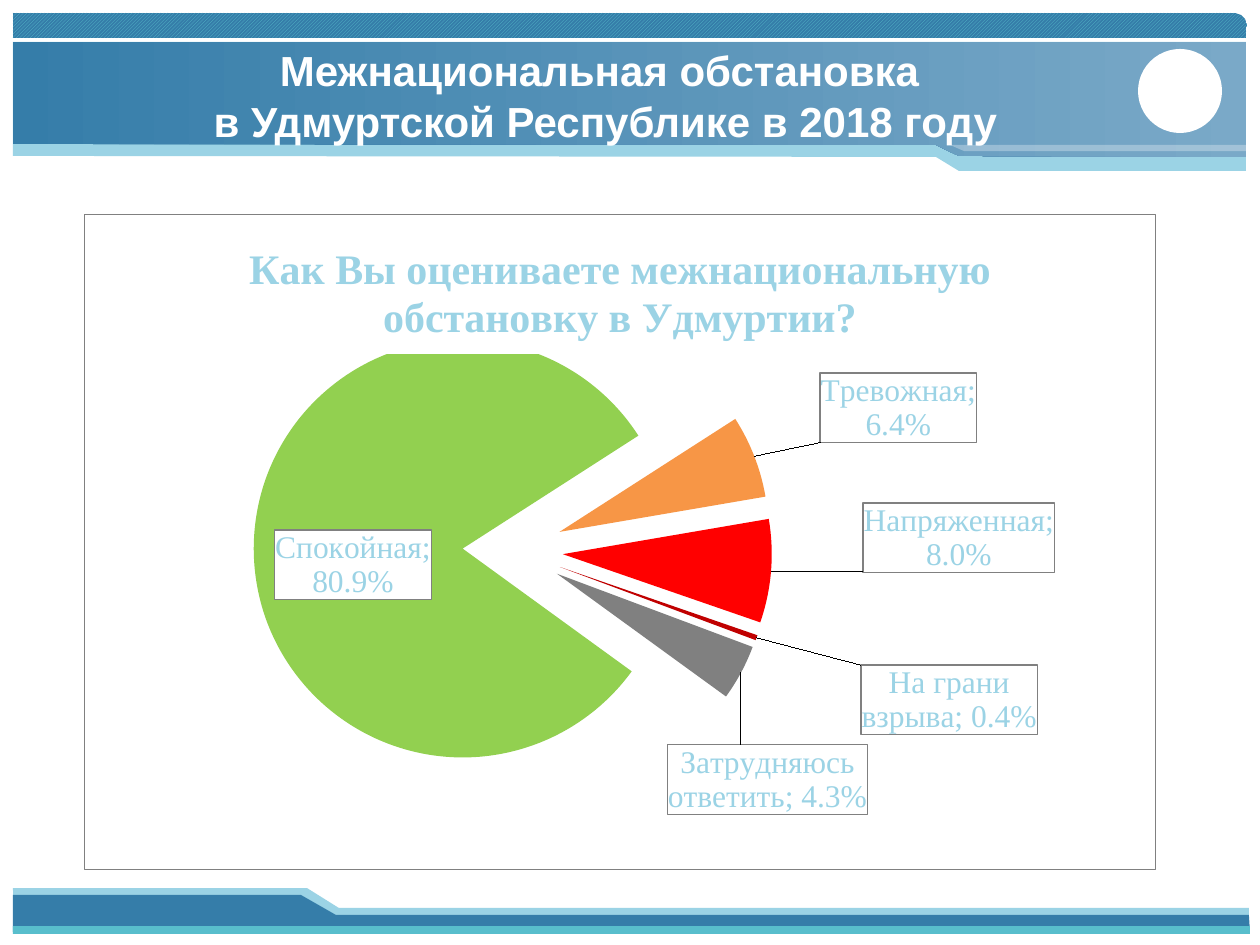
from dataclasses import dataclass

from lxml import etree
from pptx import Presentation
from pptx.chart.data import CategoryChartData
from pptx.dml.color import RGBColor
from pptx.enum.chart import XL_CHART_TYPE, XL_LABEL_POSITION
from pptx.enum.dml import MSO_PATTERN
from pptx.enum.shapes import MSO_SHAPE
from pptx.enum.text import MSO_ANCHOR, PP_ALIGN
from pptx.oxml import parse_xml
from pptx.oxml.ns import nsdecls, qn
from pptx.util import Pt

PIE = XL_CHART_TYPE.PIE
OUTSIDE, INSIDE = XL_LABEL_POSITION.OUTSIDE_END, XL_LABEL_POSITION.CENTER
HATCH = MSO_PATTERN.DARK_UPWARD_DIAGONAL
RECTANGLE, ELLIPSE = MSO_SHAPE.RECTANGLE, MSO_SHAPE.OVAL
CENTER, MIDDLE = PP_ALIGN.CENTER, MSO_ANCHOR.MIDDLE
EMU_PER_PX = 914400 / 126
CHART_BOX = (84, 214, 1072, 656)


@dataclass(frozen=True)
class Theme:
    light: str = "9BD3E5"
    blue: str = "357DA9"
    pale_blue: str = "7AA9C8"
    teal: str = "58BECC"
    white: str = "FFFFFF"
    gray: str = "808080"
    black: str = "000000"
    heading_font: str = "Arial"
    chart_font: str = "Times New Roman"
    heading_size: int = 24
    label_size: int = 18
    chart_size: int = 10


THEME = Theme()

# category, share, colour, label position, label shift from that position in px
ANSWERS = [
    ("Спокойная", 0.809, "92D050", INSIDE, (-5, 19)),
    ("Тревожная", 0.064, "F79646", OUTSIDE, (59, -11)),
    ("Напряженная", 0.08, "FF0000", OUTSIDE, (85, -34)),
    ("На грани взрыва", 0.004, "C00000", OUTSIDE, (98, 25)),
    ("Затрудняюсь ответить", 0.043, "808080", OUTSIDE, (-80, 69)),
]


def px(*lengths):
    return [round(length * EMU_PER_PX) for length in lengths]


def rgb(value):
    return RGBColor.from_string(value)


def set_font(font, color, **values):
    for name, value in values.items():
        setattr(font, name, value)
    font.color.rgb = rgb(color)


def paint(shape, color):
    shape.shadow.inherit = False
    shape.line.fill.background()
    shape.fill.solid()
    shape.fill.fore_color.rgb = rgb(color)
    return shape


def add_band(page, points, color):
    builder = page.shapes.build_freeform(*points[0], scale=EMU_PER_PX)
    builder.add_line_segments(points[1:], close=True)
    return paint(builder.convert_to_shape(), color)


def add_preset(page, kind, box, color):
    return paint(page.shapes.add_shape(kind, *px(*box)), color)


def add_footer(page):
    add_band(page, [(14, 931), (1249, 931), (1249, 908), (339, 908),
                    (307, 888), (13, 888)], THEME.light)
    add_band(page, [(13, 932), (1250, 931), (1249, 915), (336, 915),
                    (301, 895), (13, 895)], THEME.blue)
    add_preset(page, RECTANGLE, (13, 926, 1237, 8), THEME.teal)


def add_header(page):
    strip = add_band(page, [(13, 13), (1235, 13), (1241, 15), (1245, 19),
                            (1247, 24), (1246, 38), (13, 38)], THEME.blue)
    strip.fill.patterned()
    strip.fill.pattern = HATCH
    strip.fill.fore_color.rgb = rgb(THEME.teal)
    strip.fill.back_color.rgb = rgb(THEME.blue)

    add_band(page, [(1246, 42), (13, 42), (13, 156), (936, 157),
                    (959, 171), (1246, 171)], THEME.light)
    banner = add_band(page, [(1246, 42), (13, 42), (13, 144), (936, 145),
                             (959, 156), (1246, 157)], THEME.blue)
    banner.fill.gradient()
    banner.fill.gradient_angle = 0
    for stop, color in zip(banner.fill.gradient_stops,
                           (THEME.blue, THEME.pale_blue)):
        stop.color.rgb = rgb(color)

    gloss = add_band(page, [(950, 145), (1247, 145), (1247, 151), (964, 151)],
                     THEME.white)
    color = gloss._element.spPr.find(qn("a:solidFill"))[0]
    etree.SubElement(color, qn("a:alpha"), val="30000")
    add_preset(page, ELLIPSE, (1138, 49, 84, 84), THEME.white)


def add_heading(page, text):
    box = page.shapes.add_textbox(*px(45, 35, 1121, 120))
    frame = box.text_frame
    frame.word_wrap = True
    frame.vertical_anchor = MIDDLE
    para = frame.paragraphs[0]
    para.text = text
    para.alignment = CENTER
    set_font(para.font, THEME.white, name=THEME.heading_font,
             size=Pt(THEME.heading_size), bold=True)


def layout_xml(**values):
    """Manual chart layout; values are the c:manualLayout children in order."""
    children = "".join(f'<c:{name} val="{value}"/>' for name, value in values.items())
    return parse_xml(f'<c:layout {nsdecls("c")}><c:manualLayout>{children}'
                     '</c:manualLayout></c:layout>')


def frame_xml(line, fill=None, width=9525):
    body = f'<a:solidFill><a:srgbClr val="{fill}"/></a:solidFill>' if fill else ""
    return parse_xml(f'<c:spPr {nsdecls("c", "a")}>{body}<a:ln w="{width}"><a:solidFill>'
                     f'<a:srgbClr val="{line}"/></a:solidFill></a:ln></c:spPr>')


def add_label(point, position, shift):
    label = point.data_label
    set_font(label.font, THEME.light, name=THEME.chart_font,
             size=Pt(THEME.label_size))
    label.position = position
    node = label._dLbl
    x, y = (round(move / side, 3) for move, side in zip(shift, CHART_BOX[2:]))
    node.find(qn("c:idx")).addnext(layout_xml(x=x, y=y))
    node.find(qn("c:txPr")).addprevious(frame_xml(THEME.gray, THEME.white))
    for name, shown in (("showVal", 1), ("showCatName", 1), ("showPercent", 0),
                        ("showLegendKey", 0), ("showSerName", 0)):
        node.find(qn(f"c:{name}")).set("val", str(shown))
    separator = etree.SubElement(node, qn("c:separator"))
    separator.text = "; "


def add_chart_title(chart, text):
    frame = chart.chart_title.text_frame
    frame.text = text
    set_font(frame.paragraphs[0].runs[0].font, THEME.light, bold=True,
             name=THEME.chart_font, size=Pt(THEME.heading_size))
    chart.chart_title.include_in_layout = False
    chart.chart_title.format.fill.solid()
    chart.chart_title.format.fill.fore_color.rgb = rgb(THEME.white)


def add_pie(page, title):
    data = CategoryChartData(number_format="0.0%")
    data.categories = [answer[0] for answer in ANSWERS]
    data.add_series("Series 1", [answer[1] for answer in ANSWERS])
    chart = page.shapes.add_chart(PIE, *px(*CHART_BOX), data).chart
    chart.has_legend = False
    set_font(chart.font, THEME.light, name=THEME.chart_font,
             size=Pt(THEME.chart_size))
    add_chart_title(chart, title)

    plot = chart.plots[0]
    plot.vary_by_categories = True
    series = plot.series[0]
    labels = series.data_labels
    labels.show_value = labels.show_category_name = True
    labels.number_format, labels.number_format_is_linked = "0.0%", False
    for index, (_, _, color, position, shift) in enumerate(ANSWERS):
        point = series.points[index]
        point.format.fill.solid()
        point.format.fill.fore_color.rgb = rgb(color)
        add_label(point, position, shift)

    leaders = labels._element.find(qn("c:showLeaderLines"))
    if leaders is None:
        leaders = etree.SubElement(labels._element, qn("c:showLeaderLines"))
    leaders.set("val", "1")
    lines = etree.SubElement(labels._element, qn("c:leaderLines"))
    lines.append(frame_xml(THEME.black, width=0))

    series._element.find(qn("c:dPt")).addprevious(
        parse_xml(f'<c:explosion {nsdecls("c")} val="24"/>'))
    for slice_node in series._element.findall(qn("c:dPt")):
        slice_node.find(qn("c:spPr")).addprevious(
            parse_xml(f'<c:explosion {nsdecls("c")} val="24"/>'))
    pie = plot._element
    angle = pie.find(qn("c:firstSliceAng"))
    if angle is None:
        angle = etree.SubElement(pie, qn("c:firstSliceAng"))
    angle.set("val", "126")

    area = pie.getparent()
    for old in area.findall(qn("c:layout")):
        area.remove(old)
    area.insert(0, layout_xml(layoutTarget="inner", xMode="edge", yMode="edge",
                              x=0.068, y=0.117, w=0.664, h=0.791))
    chart._chartSpace.find(qn("c:txPr")).addprevious(frame_xml(THEME.gray))


def main():
    deck = Presentation()
    deck.slide_width, deck.slide_height = px(1260, 945)
    page = deck.slides.add_slide(deck.slide_layouts[6])
    add_footer(page)
    add_header(page)
    add_heading(page, "Межнациональная обстановка \vв Удмуртской Республике в 2018 году")
    add_pie(page, "Как Вы оцениваете межнациональную обстановку в Удмуртии?")
    deck.save("out.pptx")


if __name__ == "__main__":
    main()
